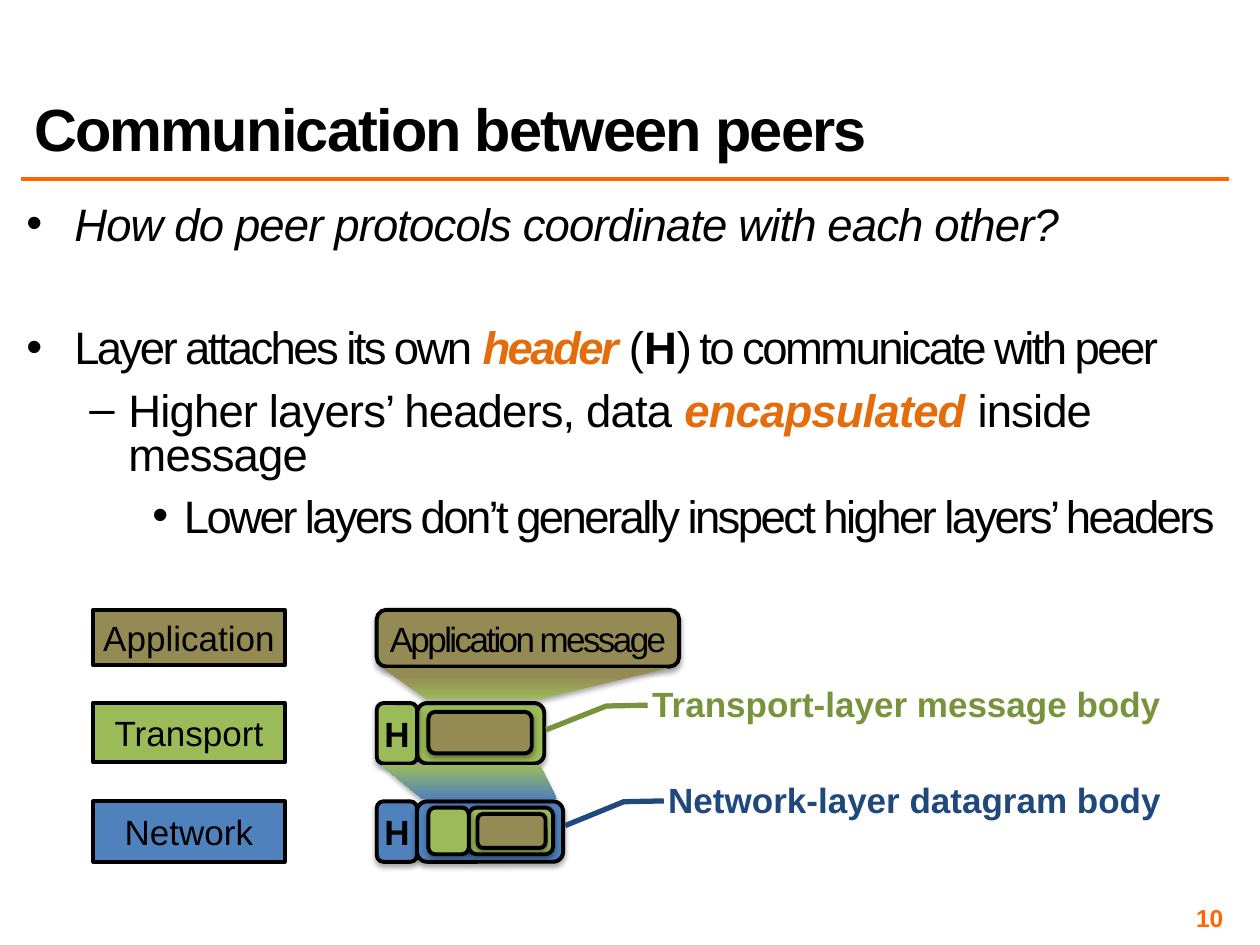
from lxml import etree
from pptx import Presentation
from pptx.dml.color import RGBColor
from pptx.enum.shapes import MSO_CONNECTOR, MSO_SHAPE
from pptx.enum.text import MSO_ANCHOR, MSO_AUTO_SIZE, PP_ALIGN
from pptx.oxml.ns import qn
from pptx.util import Inches, Pt

RECT = MSO_SHAPE.RECTANGLE
ROUNDED = MSO_SHAPE.ROUNDED_RECTANGLE
CALLOUT = MSO_SHAPE.LINE_CALLOUT_2_NO_BORDER
LEFT, CENTER, RIGHT = PP_ALIGN.LEFT, PP_ALIGN.CENTER, PP_ALIGN.RIGHT
MIDDLE, BOTTOM = MSO_ANCHOR.MIDDLE, MSO_ANCHOR.BOTTOM

BLACK, ORANGE, EMPHASIS = "000000", "FF6600", "E46C0A"
BROWN, GREEN, BLUE = "948A54", "9BBB59", "4F81BD"

TITLE = "Communication between peers"
PAGE_NUMBER = "10"
# Level: (left margin, hanging indent, bullet)
LEVELS = [(0.38, 0.38, "•"), (0.81, 0.31, "–"), (1.25, 0.25, "•")]
# (level, space before, [(text, style, letter spacing)])
BULLETS = [
    (0, 10.8, [("How do peer protocols coordinate with each other?", "italic", -0.5)]),
    (0, 45.5, [("Layer attaches its own ", "", -1.5), ("header ", "emphasis", -1.5),
               ("(", "", -1.5), ("H", "bold", -1.5),
               (") to communicate with peer", "", -1.5)]),
    (1, 10.8, [("Higher layers’ headers, data ", "", -0.5),
               ("encapsulated ", "emphasis", -0.5), ("inside message", "", -0.5)]),
    (2, 10.8, [("Lower layers don’t generally inspect higher layers’ headers", "", -1.5)]),
]
# (name, top, height, colour)
LAYERS = [("Application", 4.84, 0.44, BROWN),
          ("Transport", 5.58, 0.47, GREEN),
          ("Network", 6.36, 0.48, BLUE)]
# (left, top, width, height, colour, text, bold, letter spacing), outer before inner
MESSAGE_PARTS = [
    (2.99, 4.84, 2.40, 0.45, BROWN, "Application message", False, -1.5),
    (3.31, 5.58, 1.01, 0.48, GREEN, "", False, 0),
    (3.40, 5.65, 0.82, 0.33, BROWN, "", False, 0),
    (2.99, 5.58, 0.32, 0.48, GREEN, "H", True, 0),
    (2.99, 6.36, 0.32, 0.48, BLUE, "H", True, 0),
    (3.31, 6.36, 1.16, 0.48, BLUE, "", False, 0),
    (3.72, 6.41, 0.67, 0.37, GREEN, "", False, 0),
    (3.79, 6.46, 0.54, 0.27, BROWN, "", False, 0),
    (3.40, 6.41, 0.32, 0.37, GREEN, "", False, 0),
]
CALLOUTS = [("Transport-layer message body", 5.06, 5.37, 4.27, "77933C"),
            ("Network-layer datagram body", 5.19, 6.13, 4.14, "1F497D")]
CALLOUT_BEND = [0.516, 0.019, 0.531, -0.058, 0.961, -0.17]
# (corners, [(stop, colour)] from bottom to top)
FUNNELS = [
    ([(3.04, 5.3), (3.39, 5.55), (4.27, 5.55), (5.3, 5.3)], [(0, GREEN), (0.72, BROWN)]),
    ([(3.03, 6.07), (3.35, 6.34), (4.42, 6.34), (4.28, 6.07)], [(0, BLUE), (1, GREEN)]),
]


def rgb(value):
    return RGBColor.from_string(value)


def format_span(span, size, color=BLACK, bold=False, italic=False, spacing=0):
    font = span.font
    font.name, font.size, font.bold, font.italic = "Arial", Pt(size), bold, italic
    font.color.rgb = rgb(color)
    if spacing:
        span._r.get_or_add_rPr().set("spc", str(round(spacing * 100)))


def set_text(frame, text, size, align, anchor, **style):
    frame.text = text
    frame.vertical_anchor = anchor
    para = frame.paragraphs[0]
    para.alignment = align
    for span in para.runs:
        format_span(span, size, **style)
    return para


def set_margins(frame, margin):
    frame.margin_left = frame.margin_right = Inches(margin)
    frame.margin_top = frame.margin_bottom = Inches(margin)


def add_soft_shadow(shape):
    shape.shadow.inherit = False
    effects = shape._element.spPr.find(qn("a:effectLst"))
    shadow = etree.SubElement(effects, qn("a:outerShdw"), blurRad=str(Pt(3.1)),
                              dist=str(Pt(1.8)), dir="5400000", rotWithShape="0")
    color = etree.SubElement(shadow, qn("a:srgbClr"), val=BLACK)
    etree.SubElement(color, qn("a:alpha"), val="35000")


def add_box(page, kind, left, top, width, height, color):
    box = page.shapes.add_shape(kind, Inches(left), Inches(top), Inches(width), Inches(height))
    box.shadow.inherit = False
    box.fill.solid()
    box.fill.fore_color.rgb = rgb(color)
    box.line.color.rgb = rgb(BLACK)
    box.line.width = Pt(2.25)
    return box


def add_text_box(page, left, top, width, height):
    frame = page.shapes.add_textbox(Inches(left), Inches(top), Inches(width),
                                    Inches(height)).text_frame
    frame.word_wrap = True
    set_margins(frame, 0.04)
    return frame


def add_heading(page):
    title = page.shapes.title
    title.left, title.top = Inches(0.17), Inches(0.17)
    title.width, title.height = Inches(9.58), Inches(1.17)
    title.text_frame.auto_size = MSO_AUTO_SIZE.NONE
    para = set_text(title.text_frame, TITLE, 34, LEFT, BOTTOM, bold=True, spacing=-1)
    para.line_spacing = 0.8
    rule = page.shapes.add_connector(MSO_CONNECTOR.STRAIGHT, Inches(0.17), Inches(1.42),
                                     Inches(9.75), Inches(1.42))
    rule.line.color.rgb = rgb(ORANGE)
    rule.line.width = Pt(2)
    etree.SubElement(rule._element.spPr, qn("a:effectLst"))


def add_bullets(page):
    frame = add_text_box(page, 0.17, 1.6, 9.57, 2.95)
    for index, (level, space, spans) in enumerate(BULLETS):
        para = frame.add_paragraph() if index else frame.paragraphs[0]
        para.level, para.line_spacing, para.space_before = level, 0.8, Pt(space)
        margin, hanging, bullet = LEVELS[level]
        props = para._p.get_or_add_pPr()
        props.set("marL", str(Inches(margin)))
        props.set("indent", str(-Inches(hanging)))
        etree.SubElement(props, qn("a:buFont"), typeface="Arial")
        etree.SubElement(props, qn("a:buChar"), char=bullet)
        for text, style, spacing in spans:
            span = para.add_run()
            span.text = text
            format_span(span, 26, EMPHASIS if style == "emphasis" else BLACK,
                        bold=style in ("bold", "emphasis"),
                        italic=style in ("italic", "emphasis"), spacing=spacing)


def add_diagram(page):
    for name, top, height, color in LAYERS:
        box = add_box(page, RECT, 0.74, top, 1.52, height, color)
        box.text_frame.word_wrap = False
        set_text(box.text_frame, name, 20, CENTER, MIDDLE)

    for left, top, width, height, color, text, bold, spacing in MESSAGE_PARTS:
        box = add_box(page, ROUNDED, left, top, width, height, color)
        add_soft_shadow(box)
        if text:
            set_margins(box.text_frame, 0)
            set_text(box.text_frame, text, 20, CENTER, MIDDLE, bold=bold, spacing=spacing)

    for text, left, top, width, color in CALLOUTS:
        callout = add_box(page, CALLOUT, left, top, width, 0.44, color)
        callout.fill.background()
        callout.line.color.rgb = rgb(color)
        callout.line.width = Pt(3)
        for index, value in enumerate(CALLOUT_BEND):
            callout.adjustments[index] = value
        frame = callout.text_frame
        frame.word_wrap = False
        frame.auto_size = MSO_AUTO_SIZE.SHAPE_TO_FIT_TEXT
        set_text(frame, text, 20, CENTER, MSO_ANCHOR.TOP, color=color, bold=True)

    for corners, stops in FUNNELS:
        points = [(Inches(x), Inches(y)) for x, y in corners]
        builder = page.shapes.build_freeform(*points[0])
        builder.add_line_segments(points[1:], close=True)
        funnel = builder.convert_to_shape()
        funnel.line.fill.background()
        funnel.fill.gradient()
        funnel.fill.gradient_angle = 90
        for stop, (position, color) in zip(funnel.fill.gradient_stops, stops):
            stop.position = position
            stop.color.rgb = rgb(color)
        add_soft_shadow(funnel)


def main():
    deck = Presentation()
    deck.slide_width, deck.slide_height = Inches(10), Inches(7.5)
    page = deck.slides.add_slide(deck.slide_layouts[5])
    add_heading(page)
    add_bullets(page)
    add_diagram(page)
    number = add_text_box(page, 7.42, 7.17, 2.33, 0.23)
    set_text(number, PAGE_NUMBER, 14, RIGHT, MIDDLE, color=ORANGE, bold=True)
    deck.save("out.pptx")


if __name__ == "__main__":
    main()
